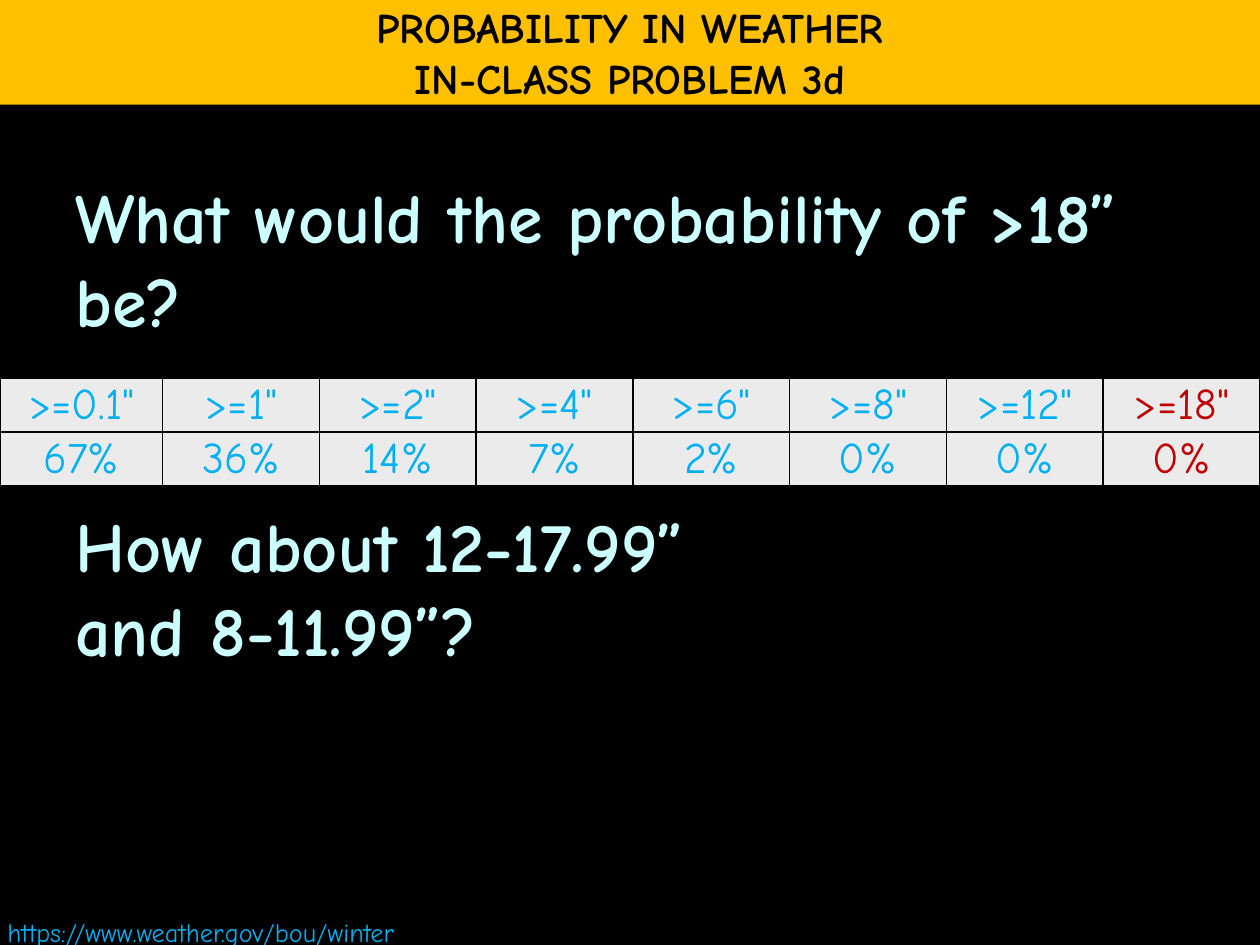
import pptx
import pptx.dml.color
import pptx.enum.text
import pptx.oxml
import pptx.oxml.ns
import pptx.util
from pptx.dml.color import RGBColor
from pptx.util import Inches

FONT = "Comic Neue"
BLACK = RGBColor(0x00, 0x00, 0x00)
GOLD = RGBColor(0xFF, 0xC0, 0x00)
PALE_CYAN = RGBColor(0xCC, 0xFF, 0xFF)
BLUE = RGBColor(0x00, 0xB0, 0xF0)
RED = RGBColor(0xC0, 0x00, 0x00)
GREY = RGBColor(0xEB, 0xEB, 0xEB)

SNOWFALL = [
    ['>=0.1"', '>=1"', '>=2"', '>=4"', '>=6"', '>=8"', '>=12"', '>=18"'],
    ["67%", "36%", "14%", "7%", "2%", "0%", "0%", "0%"],
]


def write_text(frame, text, size, color, bold=False, align=pptx.enum.text.PP_ALIGN.LEFT):
    frame.text = text
    for para in frame.paragraphs:
        para.alignment = align
        para.line_spacing = 1.0
        para.space_before = pptx.util.Pt(0)
        for span in para.runs:
            span.font.name = FONT
            span.font.size = pptx.util.Pt(size)
            span.font.bold = bold
            span.font.color.rgb = color


def add_title(page, left, top, width, height):
    title = page.shapes.title
    title.left, title.top, title.width, title.height = left, top, width, height
    title.fill.solid()
    title.fill.fore_color.rgb = GOLD
    frame = title.text_frame
    write_text(frame, "PROBABILITY IN WEATHER\nIN-CLASS PROBLEM 3d", 24, BLACK,
               bold=True, align=pptx.enum.text.PP_ALIGN.CENTER)
    frame.word_wrap = False
    frame.auto_size = pptx.enum.text.MSO_AUTO_SIZE.NONE
    frame.vertical_anchor = pptx.enum.text.MSO_ANCHOR.MIDDLE


def add_text(page, left, top, width, height, text, size, color, bold=False):
    box = page.shapes.add_textbox(left, top, width, height)
    box.text_frame.word_wrap = True
    write_text(box.text_frame, text, size, color, bold)


def set_borders(cell, color, points):
    properties = cell._tc.get_or_add_tcPr()
    namespace = pptx.oxml.ns.nsdecls("a")
    for position, side in enumerate(("lnL", "lnR", "lnT", "lnB")):
        line = pptx.oxml.parse_xml(
            f'<a:{side} {namespace} w="{pptx.util.Pt(points)}"><a:solidFill>'
            f'<a:srgbClr val="{color}"/></a:solidFill></a:{side}>')
        properties.insert(position, line)


def add_probability_table(page, left, top, width, height):
    row_count, column_count = len(SNOWFALL), len(SNOWFALL[0])
    table = page.shapes.add_table(row_count, column_count, left, top, width, height).table

    # The first column is slightly wider; the others share the rest
    first_width = Inches(1.29)
    for number, column in enumerate(table.columns):
        column.width = (width - first_width) // (column_count - 1) if number else first_width

    for row, values in enumerate(SNOWFALL):
        for column, value in enumerate(values):
            cell = table.cell(row, column)
            cell.fill.solid()
            cell.fill.fore_color.rgb = GREY
            cell.margin_left = cell.margin_right = cell.margin_top = Inches(0.01)
            cell.margin_bottom = 0
            cell.vertical_anchor = pptx.enum.text.MSO_ANCHOR.MIDDLE
            color = RED if column == column_count - 1 else BLUE
            write_text(cell.text_frame, value, 25, color,
                       align=pptx.enum.text.PP_ALIGN.CENTER)
            set_borders(cell, BLACK, 1)


def main():
    deck = pptx.Presentation()
    deck.slide_width, deck.slide_height = Inches(10), Inches(7.5)
    page = deck.slides.add_slide(deck.slide_layouts[5])
    page.background.fill.solid()
    page.background.fill.fore_color.rgb = BLACK

    # Heading band
    add_title(page, 0, 0, deck.slide_width, Inches(0.83))

    # Questions above and below the table
    add_text(page, Inches(0.5), Inches(1.33), Inches(9), Inches(1.43),
             "What would the probability of >18” be?", 40, PALE_CYAN, bold=True)
    add_probability_table(page, 0, Inches(3), deck.slide_width, Inches(0.85))
    add_text(page, Inches(0.5), Inches(3.94), Inches(9), Inches(1.43),
             "How about 12-17.99”\nand 8-11.99”?", 40, PALE_CYAN, bold=True)

    # Source address
    add_text(page, Inches(-0.04), Inches(7.22), Inches(5.01), Inches(0.35),
             "https://www.weather.gov/bou/winter", 15, BLUE)

    deck.save("out.pptx")


if __name__ == "__main__":
    main()
